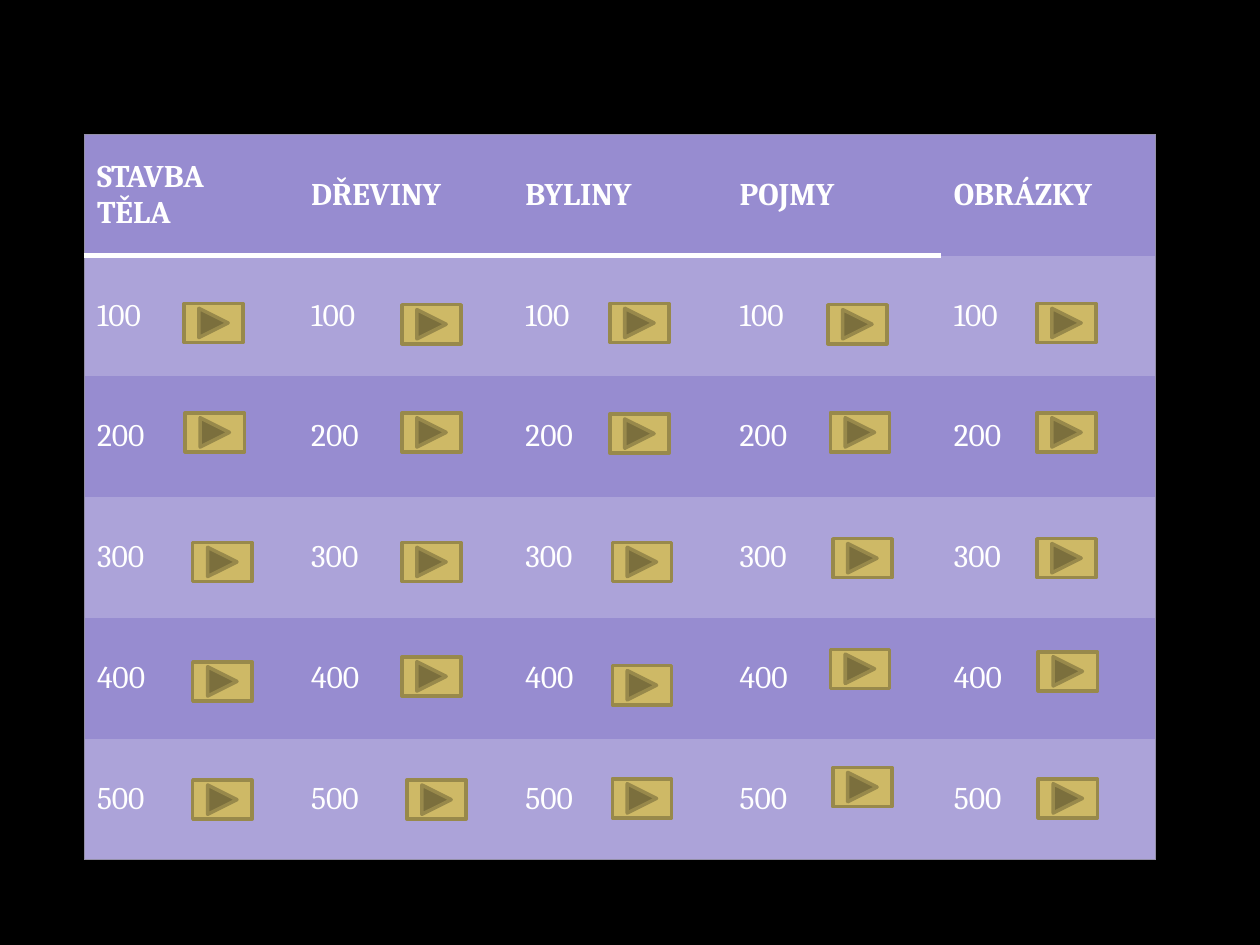
from lxml.etree import SubElement
from pptx import Presentation
from pptx.dml.color import RGBColor
from pptx.enum.shapes import MSO_SHAPE
from pptx.enum.text import MSO_ANCHOR
from pptx.oxml.ns import qn
from pptx.util import Inches, Pt

TOPICS = ["STAVBA\nTĚLA", "DŘEVINY", "BYLINY", "POJMY", "OBRÁZKY"]
POINTS = [100, 200, 300, 400, 500]
# Offset of each button from its cell's corner: one row per points value
BUTTON_OFFSETS = [
    [(0.79, 0.38), (0.82, 0.39), (0.77, 0.38), (0.80, 0.39), (0.76, 0.38)],
    [(0.80, 0.29), (0.82, 0.29), (0.77, 0.30), (0.82, 0.29), (0.76, 0.29)],
    [(0.86, 0.36), (0.82, 0.36), (0.79, 0.36), (0.84, 0.33), (0.76, 0.33)],
    [(0.86, 0.35), (0.82, 0.31), (0.79, 0.38), (0.82, 0.25), (0.77, 0.27)],
    [(0.86, 0.33), (0.86, 0.33), (0.79, 0.32), (0.84, 0.23), (0.77, 0.32)],
]
COLORS = {
    "background": "000000", "band": "978CD0", "light band": "ACA3D9",
    "text": "FFFFFF", "rule": "FFFFFF", "frame": "9490A8",
    "button": "CEB966", "button edge": "98894B",
}
LEFT, TOP, WIDTH, HEIGHT = 0.67, 1.07, 8.5, 5.75
BUTTON_W, BUTTON_H = 0.47, 0.31
NO_STYLE = "{2D5ABB26-0587-4C30-8999-92F81FD0307C}"

ROWS = [TOPICS] + [[str(value)] * len(TOPICS) for value in POINTS]
LAST_ROW, LAST_COL = len(ROWS) - 1, len(TOPICS) - 1
COL_W, ROW_H = WIDTH / len(TOPICS), HEIGHT / len(ROWS)


def color(name):
    return RGBColor.from_string(COLORS[name])


def paint(fill, name):
    fill.solid()
    fill.fore_color.rgb = color(name)


def add_border(cell, side, name, points):
    line = SubElement(cell._tc.get_or_add_tcPr(), qn(f"a:ln{side}"), w=str(Pt(points)))
    SubElement(SubElement(line, qn("a:solidFill")), qn("a:srgbClr"), val=COLORS[name])


def add_borders(cell, row, col):
    """Frame the outside of the board and rule off the header."""
    edges = {"L": col == 0, "R": col == LAST_COL, "T": row == 0, "B": row == LAST_ROW}
    for side, outside in edges.items():
        if outside:
            add_border(cell, side, "frame", 0.75)
    if row == 0 and col < LAST_COL:
        add_border(cell, "B", "rule", 3)


def add_board(slide):
    frame = slide.shapes.add_table(len(ROWS), len(TOPICS), Inches(LEFT), Inches(TOP),
                                   Inches(WIDTH), Inches(HEIGHT))
    board = frame.table
    board._tbl.tblPr.find(qn("a:tableStyleId")).text = NO_STYLE
    for row, texts in enumerate(ROWS):
        for col, text in enumerate(texts):
            cell = board.cell(row, col)
            cell.text = text
            cell.vertical_anchor = MSO_ANCHOR.MIDDLE
            add_borders(cell, row, col)
            paint(cell.fill, "light band" if row % 2 else "band")
            for paragraph in cell.text_frame.paragraphs:
                for run in paragraph.runs:
                    font_format = {"name": "Cambria", "size": Pt(18), "bold": row == 0}
                    for key, value in font_format.items():
                        setattr(run.font, key, value)
                    run.font.color.rgb = color("text")


def add_button(slide, left, top):
    button = slide.shapes.add_shape(MSO_SHAPE.ACTION_BUTTON_FORWARD_OR_NEXT, Inches(left),
                                    Inches(top), Inches(BUTTON_W), Inches(BUTTON_H))
    button.shadow.inherit = False
    paint(button.fill, "button")
    button.line.color.rgb = color("button edge")
    button.line.width = Pt(2)


def main():
    deck = Presentation()
    deck.slide_width, deck.slide_height = Inches(10), Inches(7.5)
    slide = deck.slides.add_slide(deck.slide_layouts[6])
    paint(slide.background.fill, "background")
    add_board(slide)
    for row, offsets in enumerate(BUTTON_OFFSETS, start=1):
        for col, (dx, dy) in enumerate(offsets):
            add_button(slide, LEFT + col * COL_W + dx, TOP + row * ROW_H + dy)
    deck.save("out.pptx")


if __name__ == "__main__":
    main()
